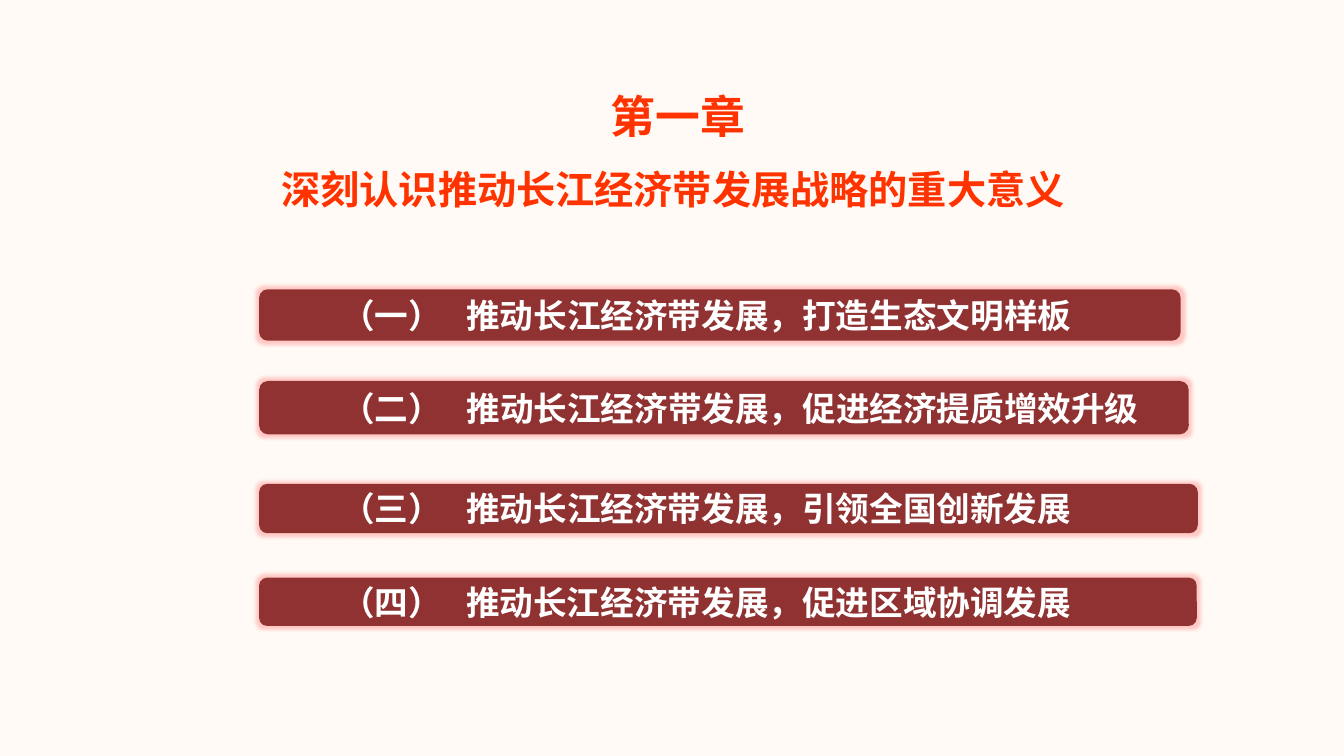
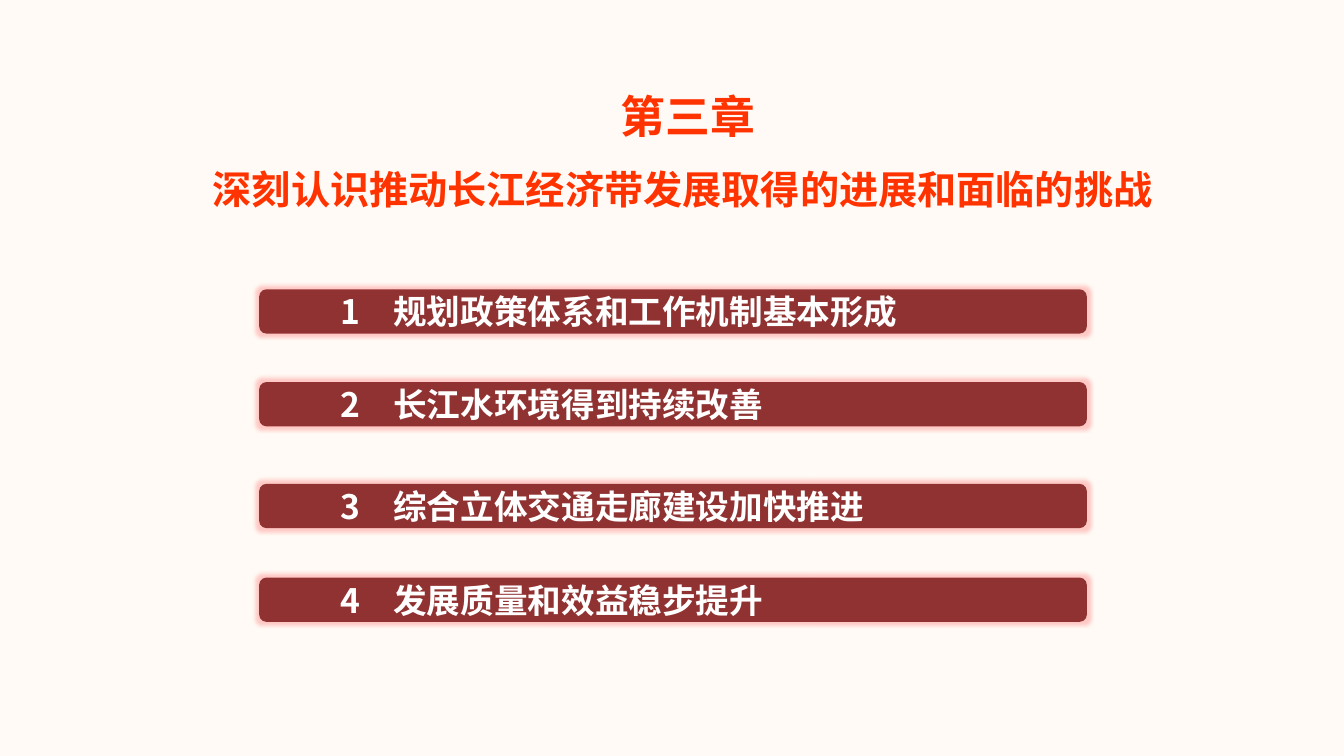
from lxml import etree
from pptx import Presentation
from pptx.dml.color import RGBColor
from pptx.enum.shapes import MSO_SHAPE
from pptx.enum.text import MSO_ANCHOR, MSO_AUTO_SIZE, PP_ALIGN
from pptx.oxml.ns import qn
from pptx.util import Inches, Pt

ROUNDED = MSO_SHAPE.ROUNDED_RECTANGLE
MIDDLE = MSO_ANCHOR.MIDDLE
NO_FIT = MSO_AUTO_SIZE.NONE
LEFT, CENTER = PP_ALIGN.LEFT, PP_ALIGN.CENTER

FONT = "Noto Sans CJK SC"
COLORS = {
    "background": "FFFAF5",
    "title": "FF3300",
    "bar": "6C0000",
    "bar_text": "FFFFFF",
    "glow": "FF0000",
}
BAR_LEFT = 2.57

# Each bar: number, text, top, width, height
CHAPTERS = [
    {
        "title": [" 第一章", "深刻认识推动长江经济带发展战略的重大意义"],
        "title_left": 2.45,
        "title_width": 8.45,
        "tab": 1.24,
        "bars": [
            ("（一）", "推动长江经济带发展，打造生态文明样板", 2.87, 9.14, 0.51),
            ("（二）", "推动长江经济带发展，促进经济提质增效升级", 3.78, 9.22, 0.53),
            ("（三）", "推动长江经济带发展，引领全国创新发展", 4.8, 9.31, 0.49),
            ("（四）", "推动长江经济带发展，促进区域协调发展", 5.73, 9.3, 0.48),
        ],
    },
    {
        "title": [" 第三章", "深刻认识推动长江经济带发展取得的进展和面临的挑战"],
        "title_left": 1.84,
        "title_width": 9.86,
        "tab": 0.52,
        "bars": [
            ("1", "规划政策体系和工作机制基本形成", 2.87, 8.21, 0.44),
            ("2", "长江水环境得到持续改善", 3.79, 8.21, 0.44),
            ("3", "综合立体交通走廊建设加快推进", 4.8, 8.21, 0.44),
            ("4", "发展质量和效益稳步提升", 5.73, 8.21, 0.44),
        ],
    },
]


def add_run(p, text, size, color):
    r = p.add_run()
    r.text = text
    r.font.size = Pt(size)
    r.font.bold = True
    r.font.name = FONT
    r.font.color.rgb = RGBColor.from_string(COLORS[color])
    ea = etree.Element(qn("a:ea"), typeface=FONT)
    r.font._element.find(qn("a:latin")).addnext(ea)


def add_bar(s, number, text, top, width, height, tab):
    sp = s.shapes.add_shape(ROUNDED, Inches(BAR_LEFT), Inches(top),
                            Inches(width), Inches(height))
    sp.line.fill.background()

    # Translucent fill with a soft glow
    sp.fill.solid()
    sp.fill.fore_color.rgb = RGBColor.from_string(COLORS["bar"])
    sp.shadow.inherit = False
    sp_pr = sp._element.spPr
    fill_color = sp_pr.find(qn("a:solidFill")).find(qn("a:srgbClr"))
    etree.SubElement(fill_color, qn("a:alpha"), val="75000")
    glow = etree.SubElement(sp_pr.find(qn("a:effectLst")), qn("a:glow"),
                            rad=str(Inches(0.07)))
    glow_color = etree.SubElement(glow, qn("a:srgbClr"), val=COLORS["glow"])
    etree.SubElement(glow_color, qn("a:alpha"), val="20000")

    # Number and text, separated by a tab stop
    tf = sp.text_frame
    tf.word_wrap = True
    tf.vertical_anchor = MIDDLE
    tf.margin_left = Inches(0.79)
    p = tf.paragraphs[0]
    p.alignment = LEFT
    tabs = etree.SubElement(p._p.get_or_add_pPr(), qn("a:tabLst"))
    etree.SubElement(tabs, qn("a:tab"), pos=str(Inches(tab)), algn="l")
    add_run(p, f"{number}\t{text}", 24, "bar_text")


prs = Presentation()
prs.slide_width = Inches(13.33)
prs.slide_height = Inches(7.5)

# Shared background
background = prs.slide_master.background.fill
background.solid()
background.fore_color.rgb = RGBColor.from_string(COLORS["background"])
title_only = prs.slide_layouts[5]

for chapter in CHAPTERS:
    s = prs.slides.add_slide(title_only)

    # Chapter number and title
    title = s.shapes.title
    title.left, title.top = Inches(chapter["title_left"]), Inches(0.55)
    title.width, title.height = Inches(chapter["title_width"]), Inches(1.62)
    tf = title.text_frame
    tf.auto_size = NO_FIT
    tf.vertical_anchor = MIDDLE
    for i, (text, size) in enumerate(zip(chapter["title"], (32, 28))):
        p = tf.add_paragraph() if i else tf.paragraphs[0]
        p.alignment = CENTER
        p.line_spacing = 1.5
        add_run(p, text, size, "title")

    # Section bars
    for bar in chapter["bars"]:
        add_bar(s, *bar, chapter["tab"])

prs.save("out.pptx")
